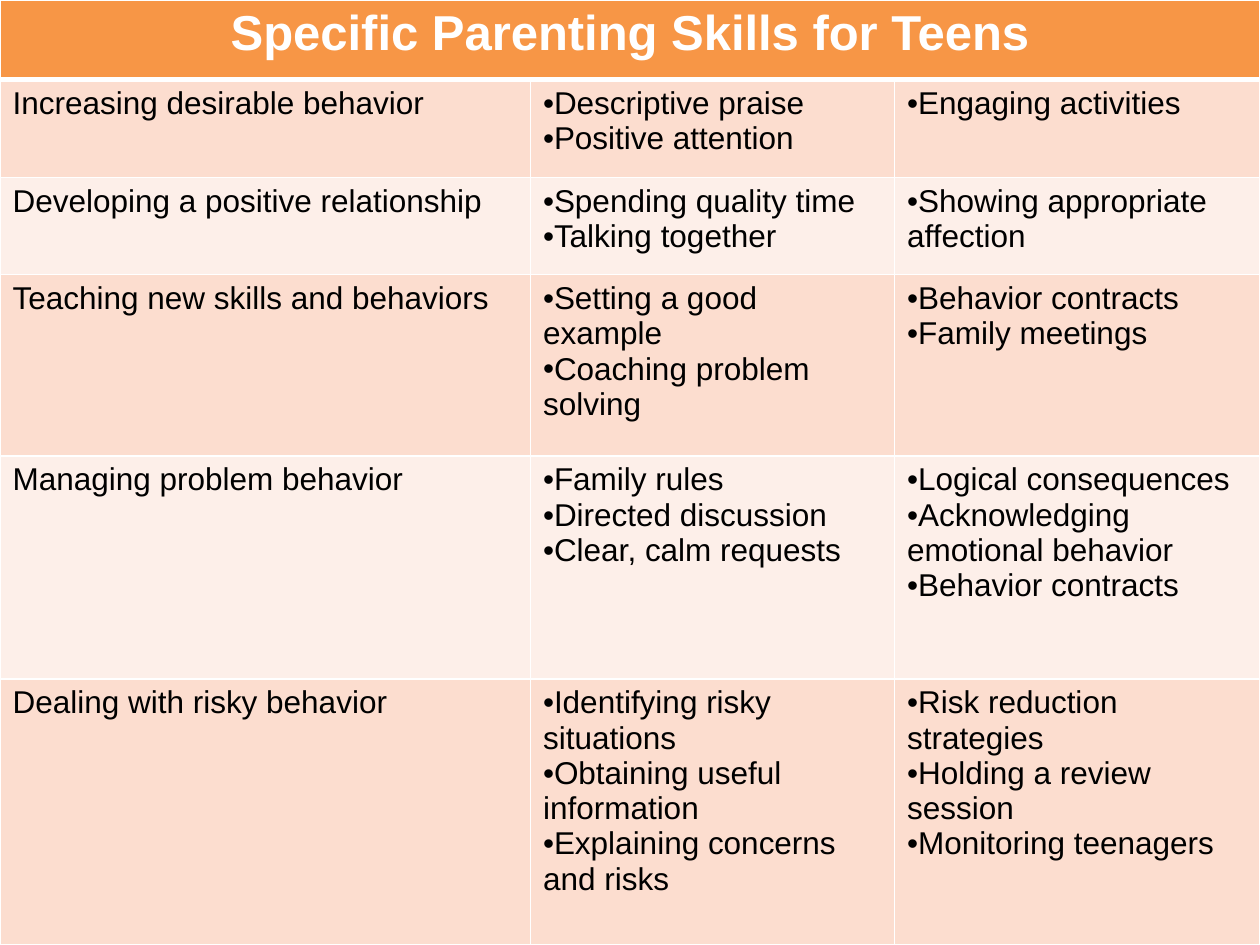
from dataclasses import dataclass

from lxml.etree import SubElement
from pptx import Presentation
from pptx.dml.color import RGBColor
from pptx.enum.text import PP_ALIGN
from pptx.oxml import parse_xml
from pptx.oxml.ns import nsdecls, qn
from pptx.util import Inches, Pt


@dataclass(frozen=True)
class Theme:
    font: str = "Arial"
    title_size: int = 28
    body_size: int = 18
    title_color: str = "FFFFFF"
    body_color: str = "000000"
    header_fill: str = "F79646"
    band_fills: tuple = ("FCDDCF", "FDEFE9")
    border_color: str = "FFFFFF"
    border_width: float = 1
    header_rule_width: float = 3


TITLE = "Specific Parenting Skills for Teens"
COLUMN_WIDTHS = (4.21, 2.89, 2.9)
ROW_HEIGHTS = (0.63, 0.78, 0.77, 1.44, 1.77, 2.11)

# Each row: goal, then two lists of skills
SKILLS = [
    ("Increasing desirable behavior",
     ["Descriptive praise", "Positive attention"],
     ["Engaging activities"]),
    ("Developing a positive relationship",
     ["Spending quality time", "Talking together"],
     ["Showing appropriate affection"]),
    ("Teaching new skills and behaviors",
     ["Setting a good example", "Coaching problem solving"],
     ["Behavior contracts", "Family meetings"]),
    ("Managing problem behavior",
     ["Family rules", "Directed discussion", "Clear, calm requests"],
     ["Logical consequences", "Acknowledging emotional behavior",
      "Behavior contracts"]),
    ("Dealing with risky behavior",
     ["Identifying risky situations", "Obtaining useful information",
      "Explaining concerns and risks"],
     ["Risk reduction strategies", "Holding a review session",
      "Monitoring teenagers"]),
]


class SlideBuilder:
    def __init__(self, slide, theme):
        self.slide = slide
        self.theme = theme

    def add_table(self, column_widths, row_heights):
        frame = self.slide.shapes.add_table(
            len(row_heights), len(column_widths), Inches(0), Inches(0),
            Inches(sum(column_widths)), Inches(sum(row_heights)))
        table = frame.table
        for column, width in zip(table.columns, column_widths):
            column.width = Inches(width)
        for row, height in zip(table.rows, row_heights):
            row.height = Inches(height)
        return table

    def style_cell(self, cell, fill, top=None, bottom=None):
        cell.fill.solid()
        cell.fill.fore_color.rgb = RGBColor.from_string(fill)
        usual = self.theme.border_width
        widths = {"lnL": usual, "lnR": usual,
                  "lnT": top or usual, "lnB": bottom or usual}
        properties = cell._tc.get_or_add_tcPr()
        # Border lines must come before the fill
        for position, (side, width) in enumerate(widths.items()):
            properties.insert(position, parse_xml(
                f'<a:{side} {nsdecls("a")} w="{Pt(width)}"><a:solidFill>'
                f'<a:srgbClr val="{self.theme.border_color}"/>'
                f'</a:solidFill></a:{side}>'))

    def write_header(self, cell, text):
        cell.text_frame.text = text
        paragraph = cell.text_frame.paragraphs[0]
        paragraph.alignment = PP_ALIGN.CENTER
        self.format_runs(paragraph, self.theme.title_size,
                         self.theme.title_color, bold=True)

    def write_body(self, cell, lines, bulleted=False):
        cell.text_frame.text = "\n".join(lines)
        for paragraph in cell.text_frame.paragraphs:
            if bulleted:
                self.add_bullet(paragraph)
            self.format_runs(paragraph, self.theme.body_size,
                             self.theme.body_color)

    def add_bullet(self, paragraph):
        properties = paragraph._p.get_or_add_pPr()
        properties.set("marL", "0")
        properties.set("indent", "0")
        SubElement(properties, qn("a:buFont"), typeface=self.theme.font)
        SubElement(properties, qn("a:buChar"), char="•")

    def format_runs(self, paragraph, size, color, bold=False):
        for run in paragraph.runs:
            run.font.name = self.theme.font
            run.font.size = Pt(size)
            run.font.bold = bold
            run.font.color.rgb = RGBColor.from_string(color)


def main():
    presentation = Presentation()
    presentation.slide_width = Inches(10)
    presentation.slide_height = Inches(7.5)
    slide = presentation.slides.add_slide(presentation.slide_layouts[6])
    theme = Theme()
    builder = SlideBuilder(slide, theme)
    table = builder.add_table(COLUMN_WIDTHS, ROW_HEIGHTS)

    # Header across all columns
    for cell in table.rows[0].cells:
        builder.style_cell(cell, theme.header_fill,
                           bottom=theme.header_rule_width)
    table.cell(0, 0).merge(table.cell(0, len(COLUMN_WIDTHS) - 1))
    builder.write_header(table.cell(0, 0), TITLE)

    # Banded rows of skills
    for index, (goal, *skill_lists) in enumerate(SKILLS):
        cells = list(table.rows[index + 1].cells)
        for cell in cells:
            builder.style_cell(
                cell, theme.band_fills[index % 2],
                top=theme.header_rule_width if index == 0 else None)
        builder.write_body(cells[0], [goal])
        for cell, skills in zip(cells[1:], skill_lists):
            builder.write_body(cell, skills, bulleted=True)

    presentation.save("out.pptx")


if __name__ == "__main__":
    main()
